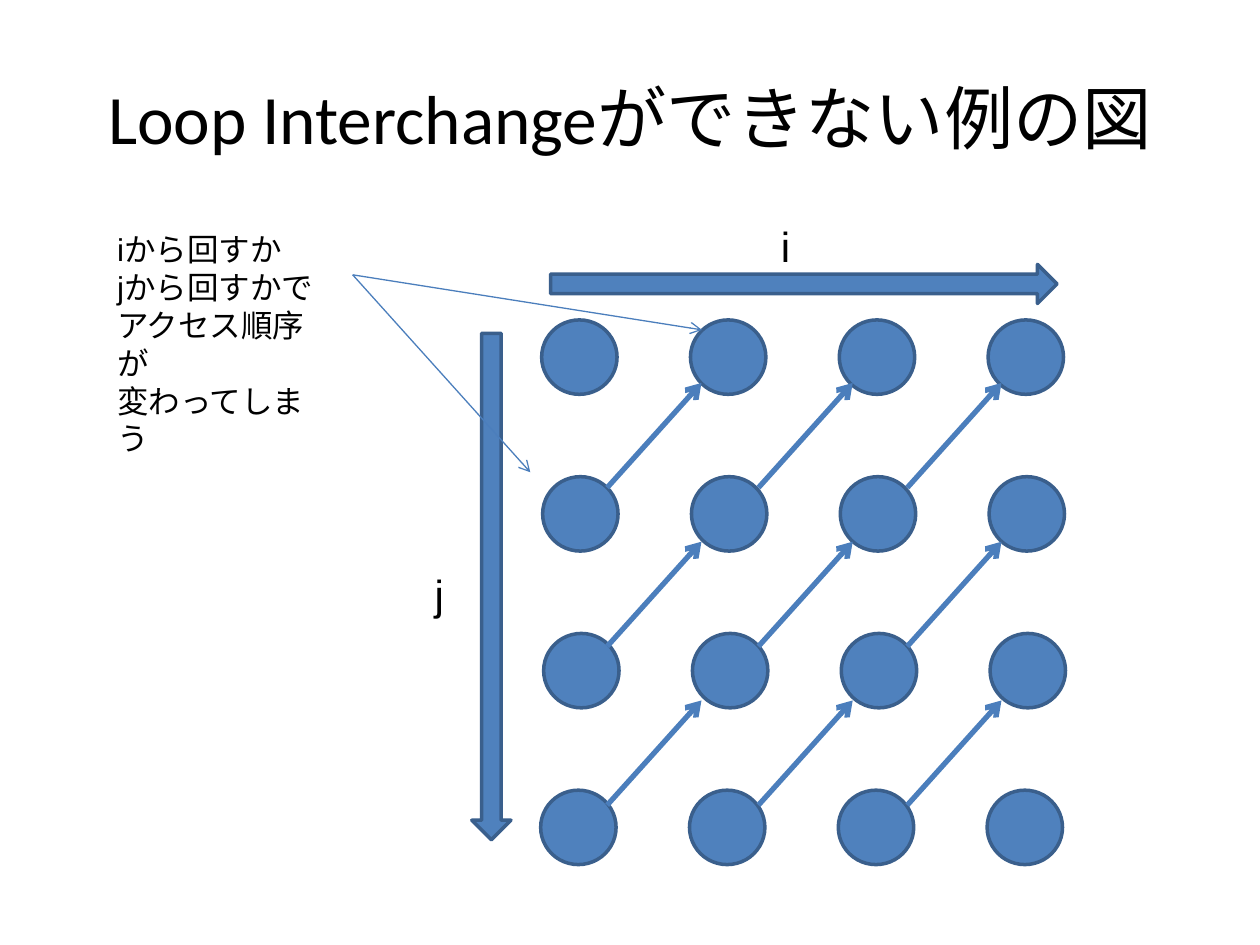
from lxml import etree
from pptx import Presentation
from pptx import util as u
from pptx.dml.color import RGBColor
from pptx.enum import shapes, text
from pptx.oxml import ns

# Content; lengths in centimetres: left, top, width, height
BLACK, BLUE, EDGE, LINK = "000000", "4F81BD", "3A5F8C", "4B7EBC"
TITLE = "Loop Interchangeができない例の図"
NOTE = ["iから回すか\vjから回すかで", "アクセス順序が\v変わってしまう"]
LABELS = [("i", 15.49, 4.32), ("j", 8.51, 11.33)]
LOOP_ARROWS = [((11.1, 5.33, 10.21, 0.79), 0), ((4.8, 11.43, 10.21, 0.79), 90)]

# Grid of iterations: each row has its own left edge
ROW_LEFTS = [10.92, 10.94, 10.96, 10.9]
COLUMNS, COLUMN_STEP = 4, 3.0
FIRST_TOP, ROW_STEP = 6.45, 3.16
NODE_SIZE = (1.52, 1.5)

# Dependences run from a node to its upper right neighbour
LINK_STARTS = [12.24, 15.29, 18.29]
LINK_TOP, LINK_STEP, LINK_RUN, LINK_RISE = 9.83, 3.2, 1.9, 2.11
POINTER_START = (7.11, 5.54)
POINTER_ENDS = [(10.69, 9.52), (14.15, 6.65)]


def colour(value):
    return RGBColor.from_string(value)


def cm(values):
    return [u.Cm(value) for value in values]


def add_shape(kind, box, rotation=0):
    shape = slide.shapes.add_shape(kind, *cm(box))
    shape.rotation = rotation
    shape.shadow.inherit = False
    shape.fill.solid()
    shape.fill.fore_color.rgb = colour(BLUE)
    shape.line.color.rgb = colour(EDGE)
    shape.line.width = u.Pt(2)


def add_arrow(start, end, width):
    arrow = slide.shapes.add_connector(
        shapes.MSO_CONNECTOR.STRAIGHT, *cm(start), *cm(end))
    arrow.line.color.rgb = colour(LINK)
    arrow.line.width = u.Pt(width)
    etree.SubElement(arrow.line._get_or_add_ln(), ns.qn("a:tailEnd"), type="arrow")
    etree.SubElement(arrow._element.spPr, ns.qn("a:effectLst"))


def add_text(paragraphs, box, size, font, wrap=True,
             align=text.PP_ALIGN.LEFT, anchor=text.MSO_ANCHOR.TOP):
    frame = slide.shapes.add_textbox(*cm(box)).text_frame
    frame.word_wrap = wrap
    frame.vertical_anchor = anchor
    frame.text = "\n".join(paragraphs)
    for paragraph in frame.paragraphs:
        paragraph.alignment = align
        paragraph.font.size = u.Pt(size)
        paragraph.font.name = font
        paragraph.font.color.rgb = colour(BLACK)


presentation = Presentation()
presentation.slide_width, presentation.slide_height = cm((25.4, 19.05))
slide = presentation.slides.add_slide(presentation.slide_layouts[6])

# Title
add_text([TITLE], (1.27, 0.76, 22.86, 3.18), 39.6, "Calibri",
         align=text.PP_ALIGN.CENTER, anchor=text.MSO_ANCHOR.MIDDLE)

# Iteration nodes
for row, left in enumerate(ROW_LEFTS):
    for column in range(COLUMNS):
        corner = (left + column * COLUMN_STEP, FIRST_TOP + row * ROW_STEP)
        add_shape(shapes.MSO_SHAPE.OVAL, corner + NODE_SIZE)

# Loop directions and their index names
for box, rotation in LOOP_ARROWS:
    add_shape(shapes.MSO_SHAPE.RIGHT_ARROW, box, rotation)
for name, left, top in LABELS:
    add_text([name], (left, top, 0.71, 1.27), 24, "Arial", wrap=False)

# Dependence arrows
for row in range(len(ROW_LEFTS) - 1):
    y = LINK_TOP + row * LINK_STEP
    for x in LINK_STARTS:
        add_arrow((x, y), (x + LINK_RUN, y - LINK_RISE), 3)

# Note with its two pointers
for end in POINTER_ENDS:
    add_arrow(POINTER_START, end, 0.75)
add_text(NOTE, (2.11, 4.52, 4.7, 3.33), 18, "Arial")

presentation.save("out.pptx")
